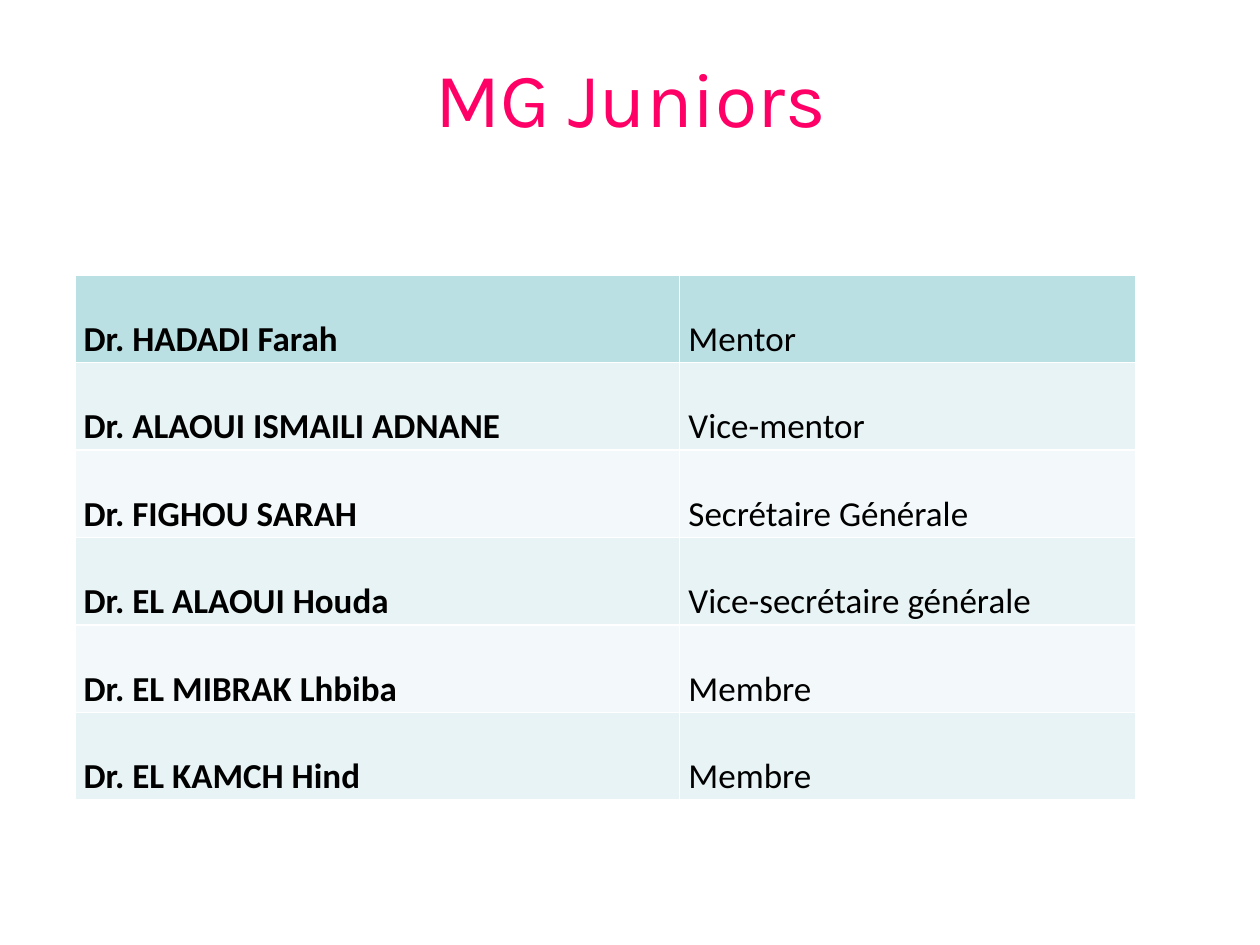
from typing import NamedTuple

from lxml.etree import SubElement
from pptx import Presentation
from pptx.dml.color import RGBColor
from pptx.enum.text import MSO_ANCHOR as Anchor, PP_ALIGN as Align
from pptx.oxml.ns import qn
from pptx.util import Pt

COLORS = {
    "title": "FF0066",
    "text": "000000",
    "border": "FFFFFF",
    "header": "BBE0E3",
    "odd": "E7F3F4",
    "even": "F3F9FA",
}
COLUMN_WIDTHS = (345.6, 260.9)
ROW_HEIGHT = 50.05


class Member(NamedTuple):
    name: str
    role: str


MEMBERS = (
    Member("Dr. HADADI Farah", "Mentor"),
    Member("Dr. ALAOUI ISMAILI ADNANE", "Vice-mentor"),
    Member("Dr. FIGHOU SARAH", "Secrétaire Générale"),
    Member("Dr. EL ALAOUI Houda", "Vice-secrétaire générale"),
    Member("Dr. EL MIBRAK Lhbiba", "Membre"),
    Member("Dr. EL KAMCH Hind", "Membre"),
)


def write_text(frame, text: str, *, size: float, font: str, color: str,
               align: Align, bold: bool = False, spacing: float = 1.0) -> None:
    paragraph = frame.paragraphs[0]
    paragraph.alignment = align
    paragraph.line_spacing = spacing
    run = paragraph.add_run()
    run.text = text
    run.font.size = Pt(size)
    run.font.name = font
    run.font.bold = bold
    run.font.color.rgb = RGBColor.from_string(COLORS[color])


def add_borders(cell, width: float = 1) -> None:
    properties = cell._tc.get_or_add_tcPr()
    for side in ("lnL", "lnR", "lnT", "lnB"):
        line = SubElement(properties, qn(f"a:{side}"), w=str(Pt(width)))
        fill = SubElement(line, qn("a:solidFill"))
        SubElement(fill, qn("a:srgbClr"), val=COLORS["border"])


def format_cell(cell, text: str, fill: str, bold: bool) -> None:
    cell.margin_left = cell.margin_right = Pt(5)
    cell.margin_top = cell.margin_bottom = Pt(0)
    add_borders(cell)
    cell.fill.solid()
    cell.fill.fore_color.rgb = RGBColor.from_string(COLORS[fill])
    write_text(cell.text_frame, text, size=20, font="Calibri", color="text",
               align=Align.JUSTIFY, bold=bold, spacing=2.0)


def add_title(slide, text: str) -> None:
    title = slide.shapes.title
    title.left, title.top, title.width, title.height = Pt(36.7), Pt(-1.4), Pt(648), Pt(113)
    title.text_frame.vertical_anchor = Anchor.MIDDLE
    write_text(title.text_frame, text, size=44, font="Karla", color="title",
               align=Align.CENTER)


def add_member_table(slide, members: tuple[Member, ...]) -> None:
    table = slide.shapes.add_table(
        len(members), len(COLUMN_WIDTHS), Pt(42.8), Pt(157),
        Pt(sum(COLUMN_WIDTHS)), Pt(ROW_HEIGHT * len(members))).table
    for column, width in zip(table.columns, COLUMN_WIDTHS):
        column.width = Pt(width)
    for index, member in enumerate(members):
        table.rows[index].height = Pt(ROW_HEIGHT)
        fill = "header" if index == 0 else "odd" if index % 2 else "even"
        format_cell(table.cell(index, 0), member.name, fill, bold=True)
        format_cell(table.cell(index, 1), member.role, fill, bold=False)


def main() -> None:
    presentation = Presentation()
    presentation.slide_width, presentation.slide_height = Pt(720), Pt(540)
    slide = presentation.slides.add_slide(presentation.slide_layouts[5])
    add_title(slide, "MG Juniors")
    add_member_table(slide, MEMBERS)
    presentation.save("out.pptx")


if __name__ == "__main__":
    main()
